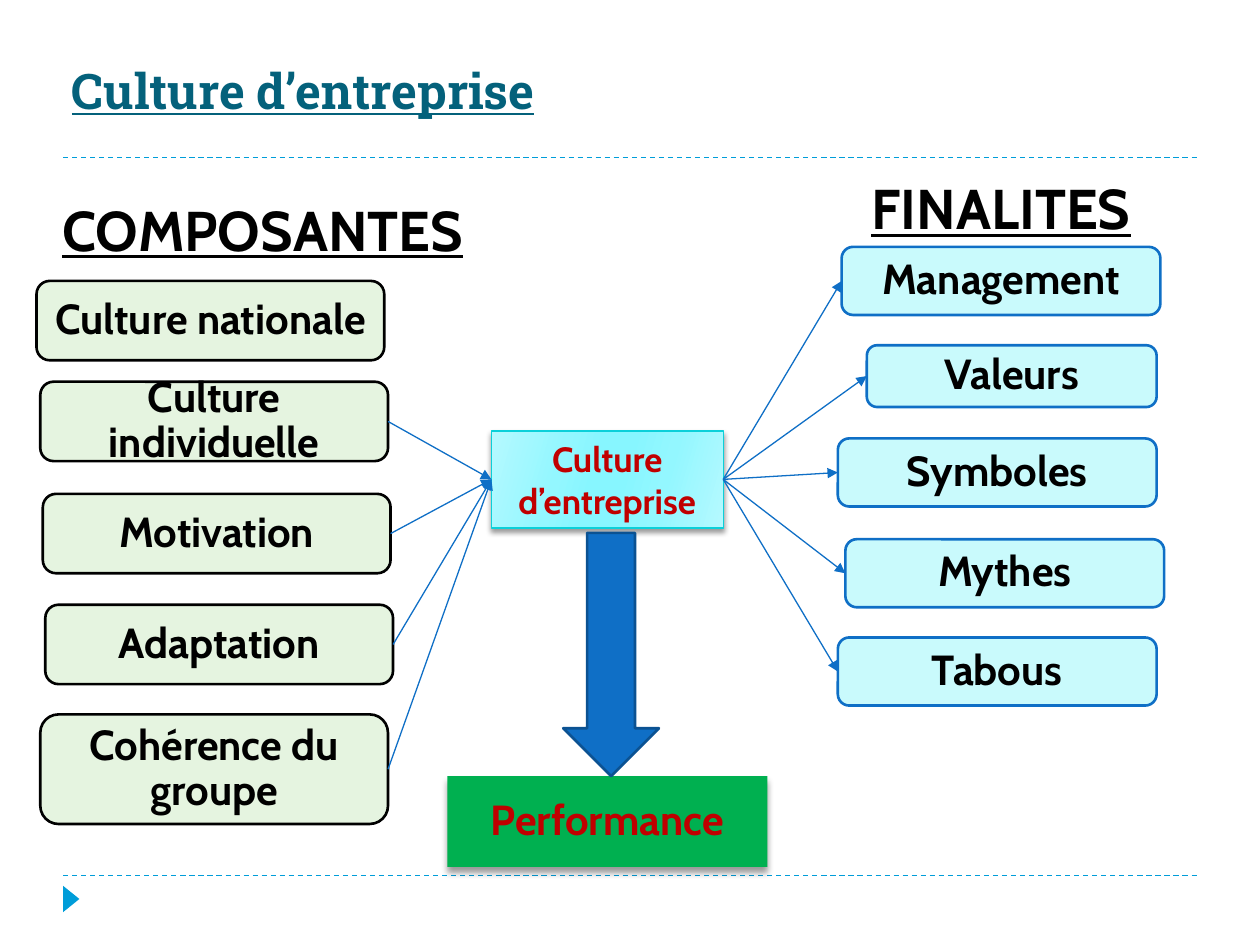
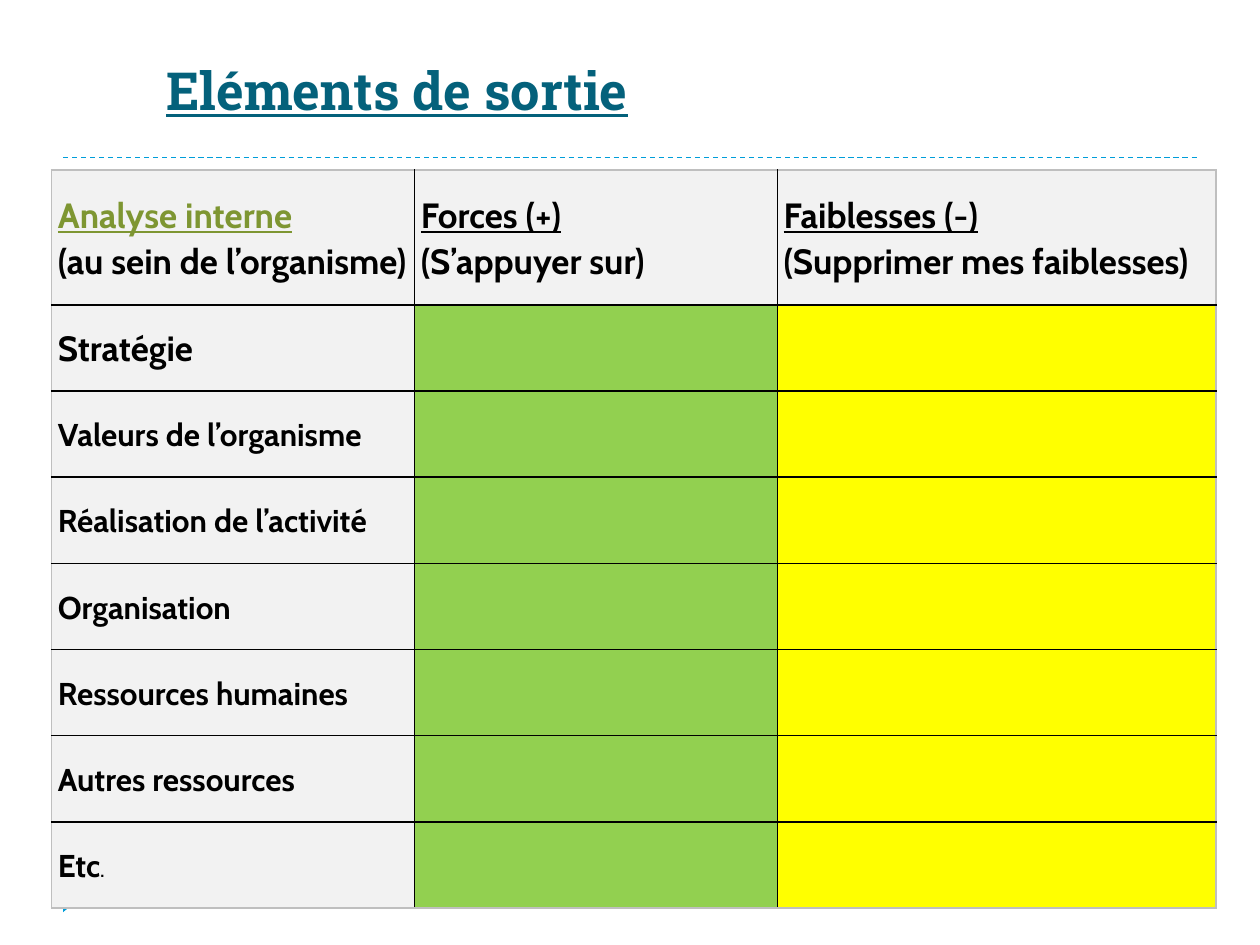
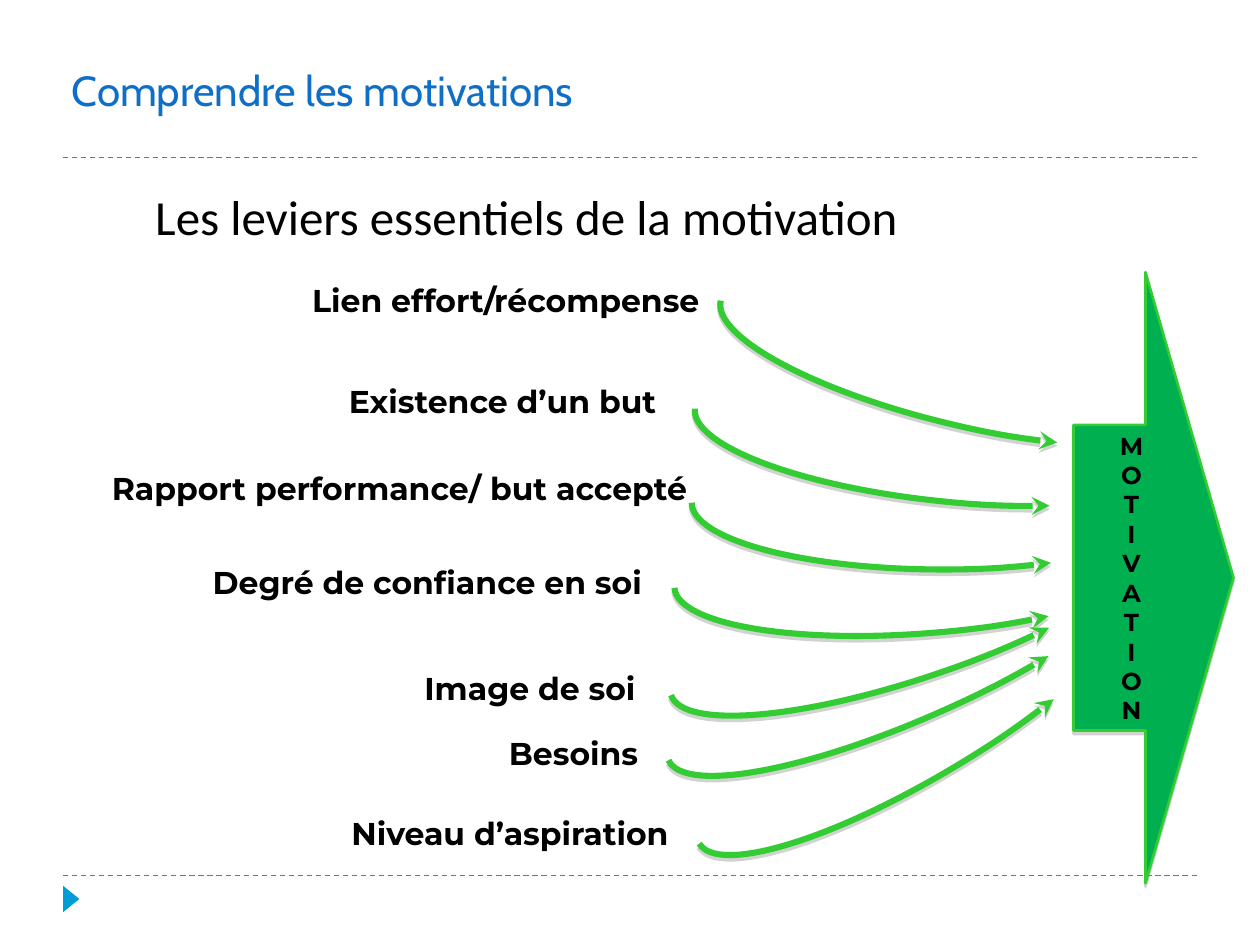
from lxml.etree import SubElement
from pptx import Presentation
from pptx.dml.color import RGBColor
from pptx.enum.dml import MSO_LINE_DASH_STYLE as Dash
from pptx.enum.shapes import MSO_CONNECTOR as Connector, MSO_SHAPE as Preset
from pptx.enum.text import MSO_ANCHOR as Anchor, PP_ALIGN as Align
from pptx.oxml.ns import qn
from pptx.util import Emu, Pt

PX = 9144  # 100 px to the inch
BLUE, SKY, TEAL = "0F6FC6", "009DD9", "04617B"
BLACK, RED, GREEN, LIME = "000000", "C00000", "00B050", "33CC33"
GREY, EDGE = "F2F2F2", "BFBFBF"

# Text looks
HEADING = {"name": "Roboto Slab", "size": 28, "bold": True, "underline": True, "color": TEAL}
NODE = {"name": "Cabin", "size": 24, "bold": True, "color": BLACK}
COLUMN_HEAD = NODE | {"size": 32, "underline": True}
LEVER = {"name": "Montserrat", "size": 18, "bold": True, "color": BLACK}

# Shadows: colour, opacity, blur, distance
SOFT = ("808080", 35, 0, 2)
DEEP = (BLACK, 40, 4, 3)

# Lever curve as fractions of its box: a start and two Bézier segments
CURVE = [(0, 0), (0, .55), (.31, 1), (.7, 1), (.8, 1), (.9, .97), (1, .9)]


def px(*values):
    return [Emu(round(value * PX)) for value in values]


def rgb(color):
    return RGBColor.from_string(color)


def set_values(target, values):
    for key, value in values.items():
        setattr(target, key, value)


# Text
def write(frame, paragraphs, look, anchor=Anchor.MIDDLE, align=Align.LEFT,
          spacing=None, inset=(10, 5)):
    """Each paragraph is a string or a list of (text, look changes)."""
    across, down = px(*inset)
    set_values(frame, {"word_wrap": True, "vertical_anchor": anchor,
                       "margin_left": across, "margin_right": across,
                       "margin_top": down, "margin_bottom": down})
    for index, content in enumerate(paragraphs):
        paragraph = frame.add_paragraph() if index else frame.paragraphs[0]
        set_values(paragraph, {"alignment": align, "line_spacing": spacing})
        for text, changes in [(content, {})] if isinstance(content, str) else content:
            run = paragraph.add_run()
            run.text = text
            values = look | changes
            run.font.color.rgb = rgb(values.pop("color"))
            set_values(run.font, values | {"size": Pt(values["size"])})


def add_text(slide, box, text, look, **layout):
    write(slide.shapes.add_textbox(*px(*box)).text_frame, [text], look, **layout)


# Shapes and lines
def style(shape, fill=None, line=None, weight=1.5, shadow=None):
    shape.shadow.inherit = False
    if fill:
        shape.fill.solid()
        shape.fill.fore_color.rgb = rgb(fill)
    else:
        shape.fill.background()
    if line:
        shape.line.color.rgb = rgb(line)
        shape.line.width = Pt(weight)
    else:
        shape.line.fill.background()
    if shadow:
        color, opacity, blur, distance = shadow
        effects = shape.element.spPr.find(qn("a:effectLst"))
        outer = SubElement(effects, qn("a:outerShdw"), blurRad=str(Pt(blur)),
                           dist=str(Pt(distance)), dir="5400000", rotWithShape="0")
        tone = SubElement(outer, qn("a:srgbClr"), val=color)
        SubElement(tone, qn("a:alpha"), val=str(opacity * 1000))


def add_shape(slide, preset, box, **values):
    shape = slide.shapes.add_shape(preset, *px(*box))
    style(shape, **values)
    return shape


def add_node(slide, box, text, preset=Preset.ROUNDED_RECTANGLE, look=NODE, **values):
    shape = add_shape(slide, preset, box, **values)
    write(shape.text_frame, [text], look, align=Align.CENTER, spacing=.9, inset=(2, 2))
    return shape


def add_gradient(shape, stops, angle):
    shape.fill.gradient()
    shape.fill.gradient_angle = 360 - angle
    stop_list = next(shape.element.iter(qn("a:gsLst")))
    for stop in list(stop_list):
        stop_list.remove(stop)
    for position, color in stops:
        stop = SubElement(stop_list, qn("a:gs"), pos=str(position * 1000))
        SubElement(stop, qn("a:srgbClr"), val=color)


def add_arrowhead(shape, kind):
    outline = shape.element.spPr.find(qn("a:ln"))
    SubElement(outline, qn("a:tailEnd"), type=kind)


def add_line(slide, color, ends=(0, 0, 0, 0)):
    line = slide.shapes.add_connector(Connector.STRAIGHT, *px(*ends))
    line.line.color.rgb = rgb(color)
    line.line.width = Pt(.75)
    SubElement(line.element.spPr, qn("a:effectLst"))
    return line


def link(slide, source, target):
    arrow = add_line(slide, BLUE)
    arrow.begin_connect(source, 3)
    arrow.end_connect(target, 1)
    add_arrowhead(arrow, "triangle")


def add_curve(slide, left, top, width, tilt):
    start, *points = [px(left + x * width, top + y * 53) for x, y in CURVE]
    builder = slide.shapes.build_freeform(*start)
    builder.add_line_segments(points, close=False)
    curve = builder.convert_to_shape()
    # Turn each three straight steps into one Bézier segment
    steps = list(curve.element.iter(qn("a:lnTo")))
    for first, second, third in zip(steps[::3], steps[1::3], steps[2::3]):
        segment = SubElement(first.getparent(), qn("a:cubicBezTo"))
        for step in (first, second, third):
            segment.append(step[0])
            step.getparent().remove(step)
    style(curve, line=LIME, weight=3.5, shadow=SOFT)
    add_arrowhead(curve, "stealth")
    curve.rotation = tilt


# Table
def set_borders(cell, colors):
    properties = cell._tc.get_or_add_tcPr()
    for index, (side, color) in enumerate(colors.items()):
        border = SubElement(properties, qn(f"a:ln{side}"), w=str(Pt(1)))
        SubElement(SubElement(border, qn("a:solidFill")), qn("a:srgbClr"), val=color)
        properties.insert(index, border)


def add_grid(slide, left, top, widths, heights, rows, fills):
    frame = slide.shapes.add_table(len(rows), len(widths),
                                   *px(left, top, sum(widths), sum(heights)))
    table = frame.table
    set_values(table, {"first_row": False, "horz_banding": False})
    for column, width in zip(table.columns, px(*widths)):
        column.width = width
    for row, height in zip(table.rows, px(*heights)):
        row.height = height
    last_row, last_column = len(rows) - 1, len(widths) - 1
    for r, row in enumerate(rows):
        for c in range(len(widths)):
            cell = table.cell(r, c)
            cell.fill.solid()
            cell.fill.fore_color.rgb = rgb(fills[c] if r else GREY)
            set_borders(cell, {"L": BLACK if c else EDGE,
                               "R": EDGE if c == last_column else BLACK,
                               "T": BLACK if r else EDGE,
                               "B": EDGE if r == last_row else BLACK})
            if c < len(row):
                look = NODE | {"size": 20 if r < 2 else 18}
                write(cell.text_frame, row[c], look, spacing=1.07, inset=(5, 0))
                across, down = px(5, 0)
                set_values(cell, {"vertical_anchor": Anchor.MIDDLE,
                                  "margin_left": across, "margin_right": across,
                                  "margin_top": down, "margin_bottom": down})


# Shared frame of every slide
def new_slide(presentation, title, box=(50, 17, 900, 108), look=HEADING,
              anchor=Anchor.MIDDLE):
    slide = presentation.slides.add_slide(presentation.slide_layouts[6])
    for y in (695, 125):
        add_line(slide, SKY, (50, y, 950, y)).line.dash_style = Dash.DASH
    marker = add_shape(slide, Preset.ISOSCELES_TRIANGLE, (46, 707, 21, 13), fill=SKY)
    marker.rotation = 90
    add_text(slide, box, title, look, anchor=anchor, inset=(7, 3))
    return slide


def build_culture(presentation):
    slide = new_slide(presentation, "Culture d’entreprise")
    for box, text in (((7, 150, 403, 64), "COMPOSANTES"), ((616, 133, 357, 64), "FINALITES")):
        add_text(slide, box, text, COLUMN_HEAD, align=Align.CENTER, anchor=Anchor.TOP)

    centre = add_node(slide, (390, 342, 184, 77), "Culture d’entreprise", Preset.RECTANGLE,
                      NODE | {"size": 20, "color": RED}, line="0BD0D9", weight=.75,
                      shadow=(BLACK, 40, 3, 2))
    centre.text_frame.paragraphs[0].line_spacing = 1.0
    add_gradient(centre, [(0, "B5F9FF"), (30, "93F7FF"), (45, "87F6FF"),
                          (55, "87F6FF"), (73, "93F7FF"), (100, "B5F9FF")], 16)

    components = [add_node(slide, (left, top, 276, height), text, fill="E5F4E0", line=BLACK)
                  for left, top, height, text in (
                      (29, 223, 63, "Culture nationale"),
                      (32, 303, 63, "Culture individuelle"),
                      (34, 392, 63, "Motivation"),
                      (36, 480, 63, "Adaptation"),
                      (32, 567, 87, "Cohérence du groupe"))]
    purposes = [add_node(slide, (left, top, width, height), text, fill="C9FAFC", line=BLUE)
                for left, top, width, height, text in (
                    (668, 196, 253, 54, "Management"),
                    (688, 274, 230, 49, "Valeurs"),
                    (665, 348, 253, 54, "Symboles"),
                    (671, 428, 253, 54, "Mythes"),
                    (665, 506, 253, 54, "Tabous"))]
    add_node(slide, (355, 616, 254, 72), "Performance", Preset.RECTANGLE,
             NODE | {"color": RED}, fill=GREEN, shadow=DEEP)

    for purpose in purposes:
        link(slide, centre, purpose)
    for component in components[1:]:
        link(slide, component, centre)
    add_shape(slide, Preset.DOWN_ARROW, (447, 423, 76, 193), fill=BLUE, line="0B5292")


def build_outputs(presentation):
    slide = new_slide(presentation, "Eléments de sortie", (125, 41, 731, 58),
                      HEADING | {"size": 30}, Anchor.BOTTOM)
    underlined = {"underline": True}
    header = [[[(name, underlined | changes)], note] for name, note, changes in (
        ("Analyse interne", "(au sein de l’organisme)", {"color": "7E9632"}),
        ("Forces (+)", "(S’appuyer sur)", {}),
        ("Faiblesses (-)", "(Supprimer mes faiblesses)", {}))]
    topics = ["Stratégie", "Valeurs de l’organisme", "Réalisation de l’activité",
              "Organisation", "Ressources humaines", "Autres ressources",
              [("Etc", {}), (".", {"size": 10})]]
    rows = [header] + [[[topic]] for topic in topics]
    add_grid(slide, 41, 135, [288, 288, 348], [107] + [68.4] * len(topics), rows,
             [GREY, "92D050", "FFFF00"])


def build_motivation(presentation):
    slide = new_slide(presentation, "Comprendre les motivations",
                      look={"name": "Cabin", "size": 24, "color": BLUE})
    add_text(slide, (63, 143, 718, 57), "Les leviers essentiels de la motivation ",
             {"name": "Calibri", "size": 28, "color": BLACK},
             align=Align.CENTER, anchor=Anchor.TOP)

    arrow = add_shape(slide, Preset.RIGHT_ARROW, (852, 216, 127, 485),
                      fill=GREEN, line=LIME, shadow=SOFT)
    arrow.adjustments[1] = .55
    write(arrow.text_frame, list("MOTIVATION"), LEVER | {"size": 14}, align=Align.CENTER)

    # Each lever: its text box, then its curve (left, top, width, tilt)
    for text, left, top, width, curve in (
            ("Lien effort/récompense", 238, 218, 360, (562, 271, 286, 13.4)),
            ("Existence d’un but", 267, 298, 296, (548, 339, 288, 5.9)),
            ("Rapport performance/ but accepté", 79, 367, 497, (549, 399, 285, 0)),
            ("Degré de confiance en soi", 159, 442, 404, (537, 454, 294, -4.9)),
            ("Image de soi", 327, 526, 216, (533, 501, 301, -19.1)),
            ("Besoins", 394, 578, 149, (528, 538, 309, -24.1)),
            ("Niveau d’aspiration", 269, 641, 298, (547, 588, 300, -31.2))):
        add_curve(slide, *curve)
        add_text(slide, (left, top, width, 40), text, LEVER,
                 align=Align.JUSTIFY, anchor=Anchor.TOP)


def main():
    presentation = Presentation()
    presentation.slide_width, presentation.slide_height = px(1000, 750)
    build_culture(presentation)
    build_outputs(presentation)
    build_motivation(presentation)
    presentation.save("out.pptx")


if __name__ == "__main__":
    main()
